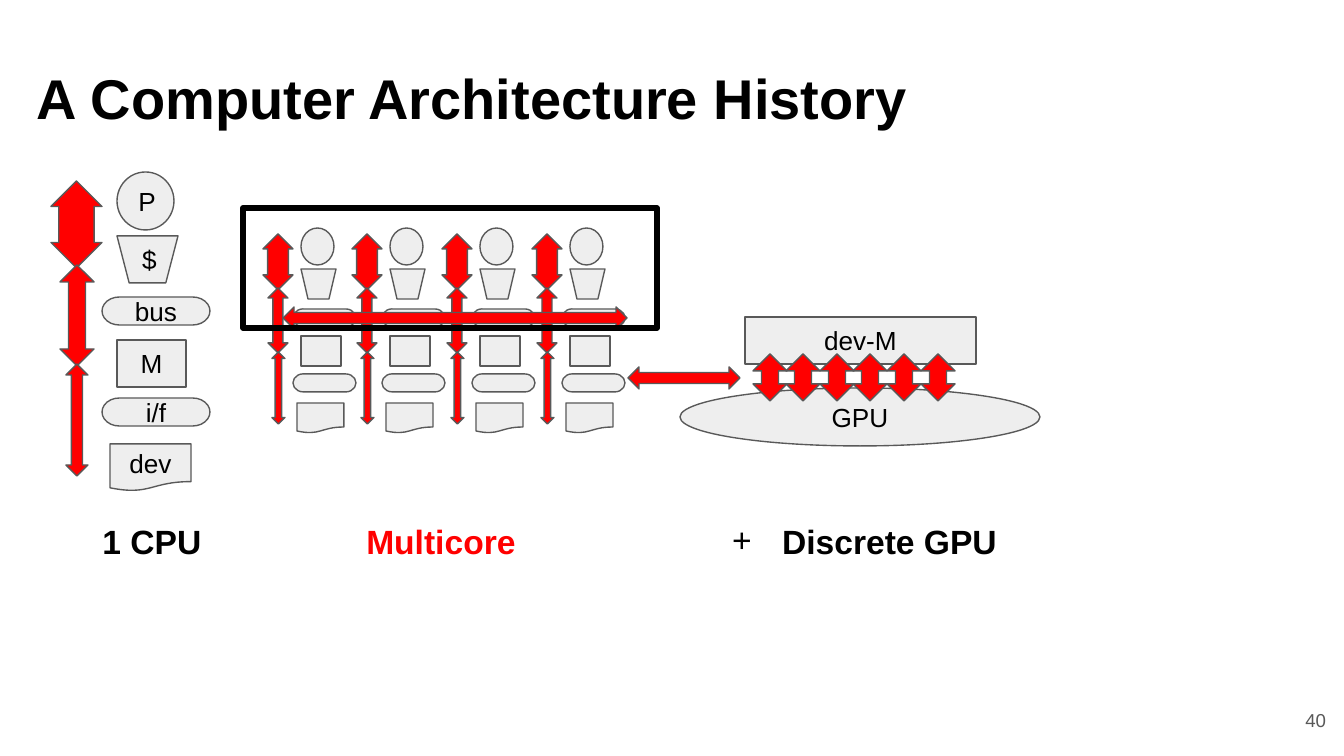
from lxml.etree import SubElement
from pptx import Presentation
from pptx.dml.color import RGBColor
from pptx.enum.shapes import MSO_SHAPE as Shape
from pptx.enum.text import MSO_ANCHOR as Anchor, PP_ALIGN as Align
from pptx.oxml.ns import qn
from pptx.util import Emu, Pt

COLORS = {"black": "000000", "red": "FF0000", "block": "EEEEEE", "edge": "595959"}
EMU_PER_PX = 914400 / 134.4


def px(length):
    return Emu(round(length * EMU_PER_PX))


def color(name):
    return RGBColor.from_string(COLORS[name])


class Diagram:
    """Drawing style together with the current slide."""
    font = "Arial"
    inset = 13

    def __init__(self, slide):
        self.slide = slide

    def set_text(self, frame, text, size, ink="black", bold=False,
                 align=Align.CENTER, anchor=Anchor.MIDDLE):
        frame.word_wrap = True
        frame.vertical_anchor = anchor
        frame.margin_left = frame.margin_right = px(self.inset)
        frame.margin_top = frame.margin_bottom = px(self.inset)
        paragraph = frame.paragraphs[0]
        paragraph.text = text
        paragraph.alignment = align
        paragraph.font.name = self.font
        paragraph.font.size = Pt(size)
        paragraph.font.bold = bold
        paragraph.font.color.rgb = color(ink)
        return paragraph

    def label(self, box, text, size, **style):
        frame = self.slide.shapes.add_textbox(*map(px, box)).text_frame
        return self.set_text(frame, text, size, **style)

    def block(self, kind, box, text="", fill="block", edge="edge", weight=0.75, parent=None):
        shapes = (parent or self.slide).shapes
        shape = shapes.add_shape(kind, *map(px, box))
        shape.shadow.inherit = False
        if fill:
            shape.fill.solid()
            shape.fill.fore_color.rgb = color(fill)
        else:
            shape.fill.background()
        shape.line.color.rgb = color(edge)
        shape.line.width = Pt(weight)
        if text:
            self.set_text(shape.text_frame, text, 14)
        return shape

    def arrow(self, box, head=0.5, rotation=0, parent=None):
        shape = self.block(Shape.UP_DOWN_ARROW, box, fill="red", parent=parent)
        shape.adjustments[0] = 0.5
        shape.adjustments[1] = head
        shape.rotation = rotation

    def core(self, left, top, scale_x=1.0, scale_y=1.0, named=False):
        """Processor-to-device stack, grouped, at any scale."""
        group = self.slide.shapes.add_group_shape()

        def place(x, y, width, height):
            return (left + round(x * scale_x), top + round(y * scale_y),
                    round(width * scale_x), round(height * scale_y))

        for kind, box, name in CORE_BLOCKS:
            self.block(kind, place(*box), name if named else "", parent=group)
        for box, head in CORE_ARROWS:
            self.arrow(place(*box), head, parent=group)

    def bullet(self, paragraph, mark, margin, indent):
        properties = paragraph._p.get_or_add_pPr()
        properties.set("marL", str(px(margin)))
        properties.set("indent", str(px(indent)))
        ink = properties.makeelement(qn("a:buClr"), {})
        SubElement(ink, qn("a:srgbClr"), val=COLORS["black"])
        typeface = properties.makeelement(qn("a:buFont"), {"typeface": self.font})
        char = properties.makeelement(qn("a:buChar"), {"char": mark})
        for position, part in enumerate((ink, typeface, char)):
            properties.insert(position, part)


# Stack parts, relative to its top-left corner
CORE_BLOCKS = [
    (Shape.OVAL, (66, 0, 57, 58), "P"),
    (Shape.FLOWCHART_MANUAL_OPERATION, (66, 64, 61, 47), "$"),
    (Shape.RECTANGLE, (66, 168, 69, 47), "M"),
    (Shape.FLOWCHART_TERMINATOR, (51, 125, 108, 28), "bus"),
    (Shape.FLOWCHART_TERMINATOR, (51, 226, 108, 28), "i/f"),
    (Shape.FLOWCHART_DOCUMENT, (59, 272, 81, 47), "dev"),
]
CORE_ARROWS = [((0, 9, 51, 87), 0.693), ((9, 93, 34, 101), 0.5), ((15, 192, 22, 112), 0.5)]


def main():
    deck = Presentation()
    deck.slide_width, deck.slide_height = px(1344), px(756)
    diagram = Diagram(deck.slides.add_slide(deck.slide_layouts[6]))

    # Title and page number
    diagram.label((24, 32, 1284, 112), "A Computer Architecture History", 30,
                  bold=True, align=Align.LEFT, anchor=Anchor.BOTTOM)
    diagram.label((1258, 698, 81, 58), "40", 10, ink="edge",
                  align=Align.RIGHT, anchor=Anchor.TOP)

    # Single CPU
    diagram.core(51, 172, named=True)
    diagram.label((51, 516, 202, 50), "1 CPU", 18, bold=True)

    # Multicore: four small stacks on one shared bus
    for index in range(4):
        diagram.core(263 + index * 269 // 3, 228, 0.58, 0.645)
    diagram.arrow((444, 146, 22, 344), rotation=90)
    diagram.label((281, 516, 320, 50), "Multicore", 18, ink="red", bold=True)
    diagram.block(Shape.RECTANGLE, (243, 208, 414, 120), fill=None, edge="black", weight=3)

    # Discrete GPU with its own memory
    diagram.block(Shape.OVAL, (680, 388, 360, 58), "GPU")
    diagram.block(Shape.RECTANGLE, (745, 317, 231, 47), "dev-M")
    diagram.arrow((673, 322, 22, 112), rotation=90)
    for index in range(6):
        diagram.arrow((753 + index * 168 // 5, 354, 34, 47))
    gpu_caption = diagram.label((696, 516, 320, 50), "Discrete GPU", 18, bold=True)
    diagram.bullet(gpu_caption, "+", margin=67, indent=-50)

    deck.save("out.pptx")


if __name__ == "__main__":
    main()
